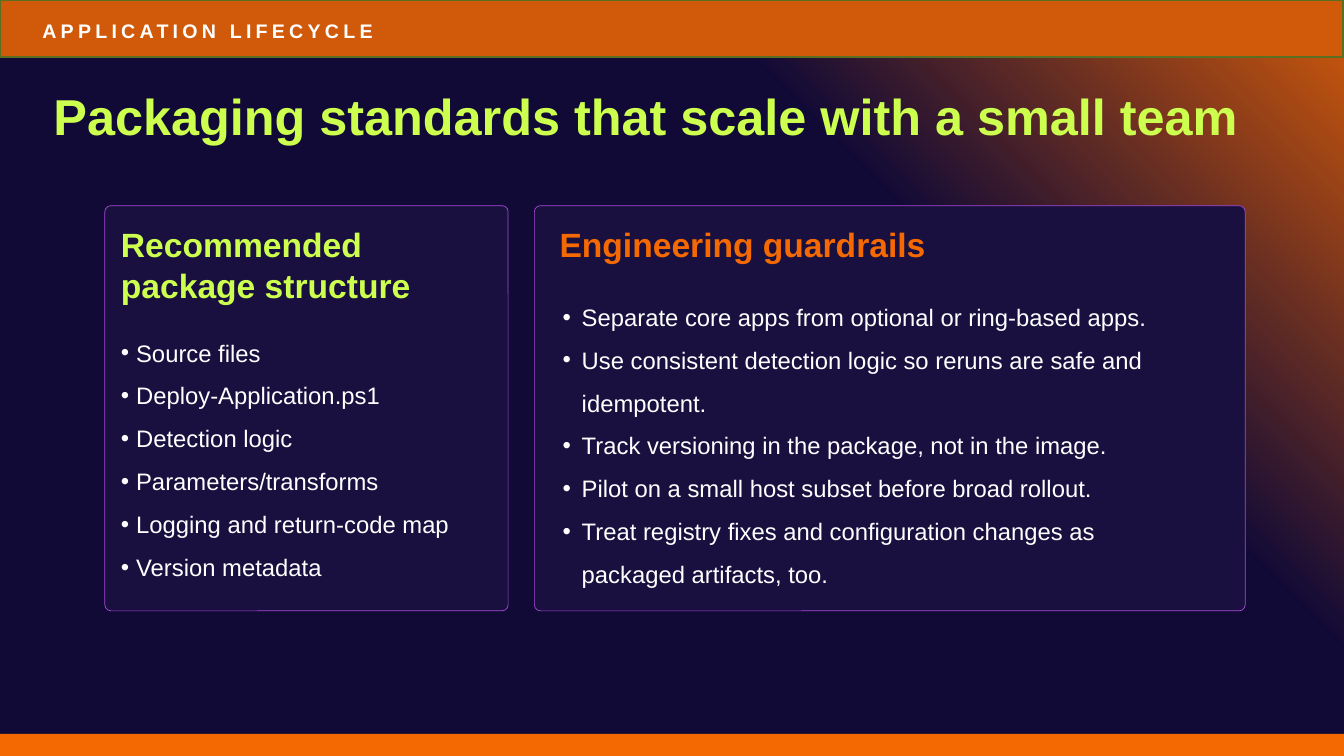
from pptx import Presentation
from pptx.dml.color import RGBColor
from pptx.enum.shapes import MSO_SHAPE
from pptx.enum.text import MSO_ANCHOR, MSO_AUTO_SIZE, PP_ALIGN
from pptx.oxml import parse_xml
from pptx.oxml.ns import nsdecls, qn
from pptx.util import Emu, Pt

RECT, ROUNDED = MSO_SHAPE.RECTANGLE, MSO_SHAPE.ROUNDED_RECTANGLE
TOP, MIDDLE = MSO_ANCHOR.TOP, MSO_ANCHOR.MIDDLE
PX = 9144  # 100 px to the inch
WIDTH, HEIGHT = 1333, 750
hex_color = RGBColor.from_string
LIME, ORANGE, WHITE = "CDFF4E", "F46901", "FEFFFF"


def add_panel(kind, left, top, width, height, fill, line=None, weight=0):
    panel = page.shapes.add_shape(kind, *(Emu(n * PX) for n in (left, top, width, height)))
    panel.shadow.inherit = False
    panel.fill.solid()
    panel.fill.fore_color.rgb = hex_color(fill)
    if line:
        panel.line.color.rgb = hex_color(line)
        panel.line.width = Pt(weight)
    else:
        panel.line.fill.background()
    return panel


def write(box, bounds, lines, size, color, bold=False, anchor=MIDDLE, inset=0, indent=0):
    box.left, box.top, box.width, box.height = (Emu(n * PX) for n in bounds)
    frame = box.text_frame
    frame.text = "\n".join(lines)
    frame.word_wrap = True
    frame.auto_size = MSO_AUTO_SIZE.NONE
    frame.vertical_anchor = anchor
    frame.margin_left = frame.margin_right = Emu(inset * PX)
    frame.margin_top = frame.margin_bottom = Emu(inset * PX)
    for para in frame.paragraphs:
        para.alignment = PP_ALIGN.LEFT
        if indent:
            para.line_spacing = 1.5
            props = para._p.get_or_add_pPr()
            props.set("marL", str(indent * PX))
            props.set("indent", str(-indent * PX))
            props.append(parse_xml(f'<a:buFont {nsdecls("a")} typeface="Arial"/>'))
            props.append(parse_xml(f'<a:buChar {nsdecls("a")} char="•"/>'))
        for span in para.runs:
            span.font.name = "Arial"
            span.font.size = Pt(size)
            span.font.bold = bold
            span.font.color.rgb = hex_color(color)


deck = Presentation()
deck.slide_width, deck.slide_height = Emu(WIDTH * PX), Emu(HEIGHT * PX)
page = deck.slides.add_slide(deck.slide_layouts[5])

# Background glow from the top right corner
glow = page.background.fill
glow.gradient()
for stop, (position, color) in zip(glow.gradient_stops, [(0, "D15A0A"), (0.31, "120A36")]):
    stop.position = position
    stop.color.rgb = hex_color(color)
gradient = page._element.find(".//" + qn("a:gradFill"))
gradient.replace(gradient.find(qn("a:lin")), parse_xml(
    f'<a:path {nsdecls("a")} path="circle"><a:fillToRect l="100000" b="100000"/></a:path>'))

# Title
write(page.shapes.title, (53, 81, 1227, 66),
      ["Packaging standards that scale with a small team"], 36, LIME, bold=True)

# Bands at top and bottom
add_panel(RECT, 0, 728, WIDTH, 22, ORANGE)
add_panel(RECT, 0, 0, 1332, 57, "D05A09", "5A6F21", 1.5)
section = page.shapes.add_textbox(0, 0, 0, 0)
write(section, (42, 13, 1155, 35), ["APPLICATION LIFECYCLE"], 14, "FFFFFF", bold=True)
section.text_frame.paragraphs[0].runs[0].font._element.set("spc", "300")

# Cards: panel left and width, heading, bullet list
cards = [
    (104, 400, "Recommended package structure", LIME, (120, 239, 347, 47),
     dict(bounds=(120, 309, 368, 280), anchor=MIDDLE, inset=0, indent=15),
     ["Source files",
      "Deploy-Application.ps1",
      "Detection logic",
      "Parameters/transforms",
      "Logging and return-code map",
      "Version metadata"]),
    (530, 705, "Engineering guardrails", ORANGE, (555, 221, 624, 42),
     dict(bounds=(555, 283, 620, 330), anchor=TOP, inset=3, indent=19),
     ["Separate core apps from optional or ring-based apps.",
      "Use consistent detection logic so reruns are safe and idempotent.",
      "Track versioning in the package, not in the image.",
      "Pilot on a small host subset before broad rollout.",
      "Treat registry fixes and configuration changes as packaged artifacts, too."]),
]
for left, width, heading, color, heading_bounds, list_format, items in cards:
    card = add_panel(ROUNDED, left, 204, width, 402, "19103F", "A449D4", 0.5)
    card.adjustments[0] = 0.015
    write(page.shapes.add_textbox(0, 0, 0, 0), heading_bounds, [heading], 24, color, bold=True)
    write(page.shapes.add_textbox(0, 0, 0, 0), lines=items, size=17, color=WHITE, **list_format)

deck.save("out.pptx")
